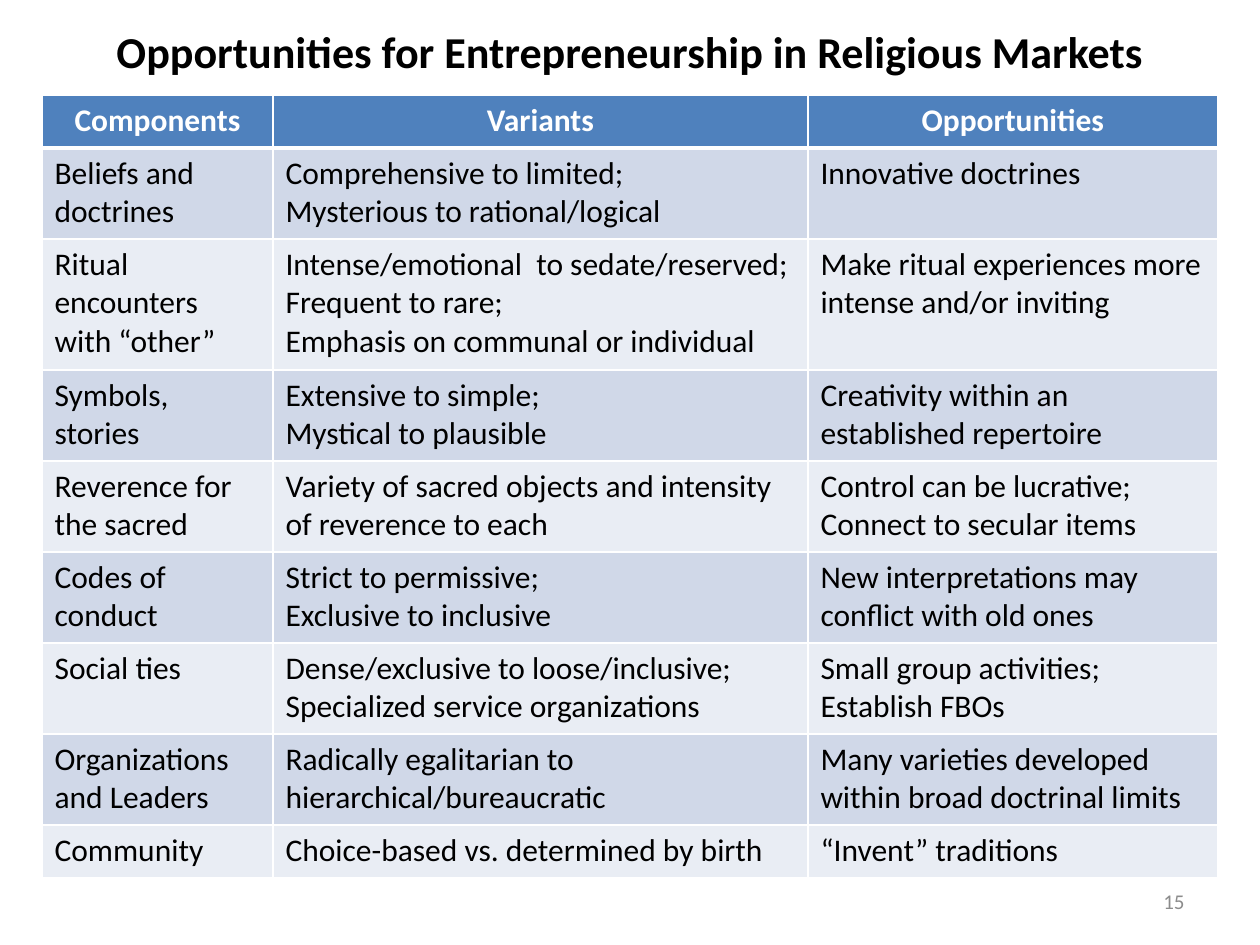
from lxml import etree
from pptx import Presentation
from pptx import util as u
from pptx.dml.color import RGBColor
from pptx.enum import text
from pptx.oxml.ns import qn

PX = 914400 // 126
LEFT, MID, RIGHT = text.PP_ALIGN.LEFT, text.PP_ALIGN.CENTER, text.PP_ALIGN.RIGHT
BLACK, WHITE, GREY = "000000", "FFFFFF", "8C8C8C"
HEAD, BANDS = "4F81BD", ("E9EDF4", "D0D8E8")

COLS = [231, 535, 410]
TALL = {1: 53, 2: 91, 3: 131}
LINES = [1, 2, 3, 2, 2, 2, 2, 2, 1]
ROWS = [
    ("Components", "Variants", "Opportunities"),
    ("Beliefs and doctrines",
     "Comprehensive to limited;\nMysterious to rational/logical",
     "Innovative doctrines"),
    ("Ritual encounters with “other”",
     "Intense/emotional  to sedate/reserved;\nFrequent to rare;\n"
     "Emphasis on communal or individual",
     "Make ritual experiences more intense and/or inviting"),
    ("Symbols, stories",
     "Extensive to simple;\nMystical to plausible",
     "Creativity within an established repertoire"),
    ("Reverence for the sacred",
     "Variety of sacred objects and intensity of reverence to each",
     "Control can be lucrative;\nConnect to secular items"),
    ("Codes of conduct",
     "Strict to permissive;\nExclusive to inclusive",
     "New interpretations may conflict with old ones"),
    ("Social ties",
     "Dense/exclusive to loose/inclusive;\nSpecialized service organizations",
     "Small group activities;\nEstablish FBOs"),
    ("Organizations and Leaders",
     "Radically egalitarian to hierarchical/bureaucratic",
     "Many varieties developed within broad doctrinal limits"),
    ("Community", "Choice-based vs. determined by birth", "“Invent” traditions"),
]


def px(n):
    return u.Emu(n * PX)


def rgb(code):
    return RGBColor.from_string(code)


class Deck:
    font = "Calibri"

    def __init__(self, wide, high):
        self.prs = Presentation()
        self.prs.slide_width, self.prs.slide_height = px(wide), px(high)
        self.slide = self.prs.slides.add_slide(self.prs.slide_layouts[6])

    def put(self, frame, words, size, color, bold=False, align=LEFT):
        for i, line in enumerate(words.split("\n")):
            para = frame.add_paragraph() if i else frame.paragraphs[0]
            para.alignment = align
            run = para.add_run()
            run.text = line
            run.font.name, run.font.size = self.font, u.Pt(size)
            run.font.bold, run.font.color.rgb = bold, rgb(color)

    def label(self, box, words, size, color, bold=False, align=LEFT):
        frame = self.slide.shapes.add_textbox(*map(px, box)).text_frame
        frame.word_wrap = True
        frame.vertical_anchor = text.MSO_ANCHOR.MIDDLE
        self.put(frame, words, size, color, bold, align)

    def edge(self, cell, top, base):
        props = cell._tc.get_or_add_tcPr()
        for side, width in (("L", 1), ("R", 1), ("T", top), ("B", base)):
            line = etree.SubElement(props, qn("a:ln" + side), w=str(u.Pt(width)))
            fill = etree.SubElement(line, qn("a:solidFill"))
            etree.SubElement(fill, qn("a:srgbClr"), val=WHITE)

    def table(self, left, top, cols, highs, rows, size):
        box = map(px, (left, top, sum(cols), sum(highs)))
        grid = self.slide.shapes.add_table(len(rows), len(cols), *box).table
        for col, wide in zip(grid.columns, cols):
            col.width = px(wide)
        for r, (row, high) in enumerate(zip(rows, highs)):
            grid.rows[r].height = px(high)
            head = r == 0
            for c, words in enumerate(row):
                cell = grid.cell(r, c)
                self.edge(cell, 3 if r == 1 else 1, 3 if head else 1)
                cell.fill.solid()
                cell.fill.fore_color.rgb = rgb(HEAD if head else BANDS[r % 2])
                self.put(cell.text_frame, words, size,
                         WHITE if head else BLACK, head, MID if head else LEFT)

    def save(self):
        self.prs.save("out.pptx")


def main():
    deck = Deck(1260, 945)
    deck.label((63, 22, 1134, 57),
               "Opportunities for Entrepreneurship in Religious Markets",
               25.2, BLACK, True, MID)
    deck.table(42, 95, COLS, [TALL[n] for n in LINES], ROWS, 18)
    deck.label((903, 876, 294, 50), "15", 12, GREY, align=RIGHT)
    deck.save()


if __name__ == "__main__":
    main()
